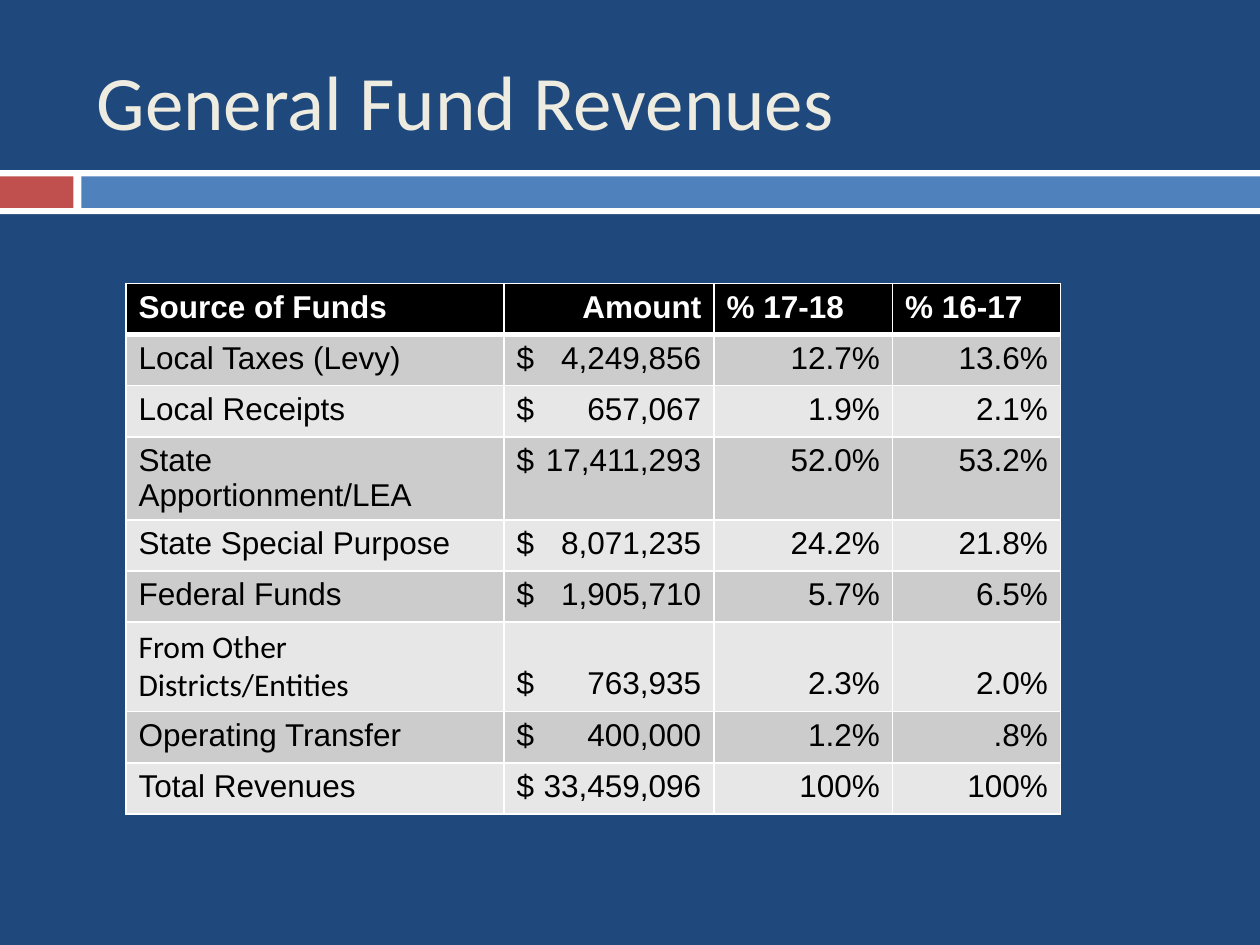
from lxml.etree import SubElement
from pptx import Presentation
from pptx.dml.color import RGBColor
from pptx.enum.shapes import MSO_SHAPE as Shape
from pptx.enum.text import MSO_ANCHOR as Anchor, PP_ALIGN as Align
from pptx.oxml.ns import qn
from pptx.util import Pt

COLORS = {
    "navy": "1F497D", "cream": "EEECE1", "white": "FFFFFF", "black": "000000",
    "red": "C0504D", "blue": "4F81BD", "dark_row": "CCCCCC", "light_row": "E7E7E7",
}
HEADER = ("Source of Funds", "Amount", "% 17-18", "% 16-17")
REVENUES = [
    ("Local Taxes (Levy)", "4,249,856", "12.7%", "13.6%"),
    ("Local Receipts", "657,067", "1.9%", "2.1%"),
    ("State Apportionment/LEA", "17,411,293", "52.0%", "53.2%"),
    ("State Special Purpose", "8,071,235", "24.2%", "21.8%"),
    ("Federal Funds", "1,905,710", "5.7%", "6.5%"),
    ("From Other Districts/Entities", "763,935", "2.3%", "2.0%"),
    ("Operating Transfer", "400,000", "1.2%", ".8%"),
    ("Total Revenues", "33,459,096", "100%", "100%"),
]
OTHER_ROW = 6
COL_WIDTHS = (216, 120, 102, 96)
ROW_HEIGHT = 29.2
AMOUNT_TAB = 105.5


def rgb(name):
    return RGBColor.from_string(COLORS[name])


class Deck:
    """Holds the style and the current slide."""

    def __init__(self, slide):
        self.s = slide
        self.heading_font, self.table_font = "Calibri", "Arial"

    def background(self, color):
        fill = self.s.background.fill
        fill.solid()
        fill.fore_color.rgb = rgb(color)

    def run(self, p, text, size, color, font, bold=False):
        r = p.add_run()
        r.text = text
        r.font.size, r.font.name, r.font.bold = Pt(size), font, bold
        r.font.color.rgb = rgb(color)

    def bar(self, x, y, w, h, color):
        sp = self.s.shapes.add_shape(Shape.RECTANGLE, Pt(x), Pt(y), Pt(w), Pt(h))
        sp.shadow.inherit = False
        sp.fill.solid()
        sp.fill.fore_color.rgb = rgb(color)
        sp.line.fill.background()

    def title(self, text, x, y, w, h):
        sp = self.s.shapes.title
        sp.left, sp.top, sp.width, sp.height = Pt(x), Pt(y), Pt(w), Pt(h)
        tf = sp.text_frame
        tf.vertical_anchor = Anchor.MIDDLE
        p = tf.paragraphs[0]
        p.alignment = Align.LEFT
        self.run(p, text, 44, "cream", self.heading_font)

    def borders(self, cell, row):
        widths = {"L": 1, "R": 1, "T": 3 if row == 1 else 1, "B": 3 if row == 0 else 1}
        tc_pr = cell._tc.get_or_add_tcPr()
        for side, width in widths.items():
            ln = SubElement(tc_pr, qn(f"a:ln{side}"), w=str(Pt(width)))
            fill = SubElement(ln, qn("a:solidFill"))
            SubElement(fill, qn("a:srgbClr"), val=COLORS["white"])

    def right_tab(self, p, position):
        tabs = SubElement(p._p.get_or_add_pPr(), qn("a:tabLst"))
        SubElement(tabs, qn("a:tab"), pos=str(Pt(position)), algn="r")

    def cell(self, cell, text, row, col):
        header = row == 0
        self.borders(cell, row)
        cell.fill.solid()
        fill = "black" if header else "dark_row" if row % 2 else "light_row"
        cell.fill.fore_color.rgb = rgb(fill)
        p = cell.text_frame.paragraphs[0]
        font = self.table_font
        if col == 1 and not header:
            text = f"$\t{text}"
            p.alignment = Align.LEFT
            self.right_tab(p, AMOUNT_TAB)
        else:
            right = col == 1 or (col > 1 and not header)
            p.alignment = Align.RIGHT if right else Align.LEFT
        if row == OTHER_ROW:
            if col == 0:
                font = self.heading_font
            else:
                cell.vertical_anchor = Anchor.BOTTOM
                cell.margin_bottom = Pt(6)
        self.run(p, text, 18, "white" if header else "black", font, header)

    def table(self, rows, x, y):
        frame = self.s.shapes.add_table(
            len(rows), len(COL_WIDTHS), Pt(x), Pt(y),
            Pt(sum(COL_WIDTHS)), Pt(ROW_HEIGHT * len(rows)))
        table = frame.table
        for column, width in zip(table.columns, COL_WIDTHS):
            column.width = Pt(width)
        for i, values in enumerate(rows):
            table.rows[i].height = Pt(ROW_HEIGHT)
            for j, text in enumerate(values):
                self.cell(table.cell(i, j), text, i, j)


def main():
    prs = Presentation()
    prs.slide_width, prs.slide_height = Pt(720), Pt(540)
    deck = Deck(prs.slides.add_slide(prs.slide_layouts[5]))
    deck.background("navy")
    deck.bar(0, 97.2, 720, 25.2, "white")
    deck.bar(0, 100.8, 42, 18, "red")
    deck.bar(46.5, 100.8, 673.5, 18, "blue")
    deck.title("General Fund Revenues", 48, 18, 642, 78)
    deck.table([HEADER, *REVENUES], 72, 162)
    prs.save("out.pptx")


if __name__ == "__main__":
    main()
